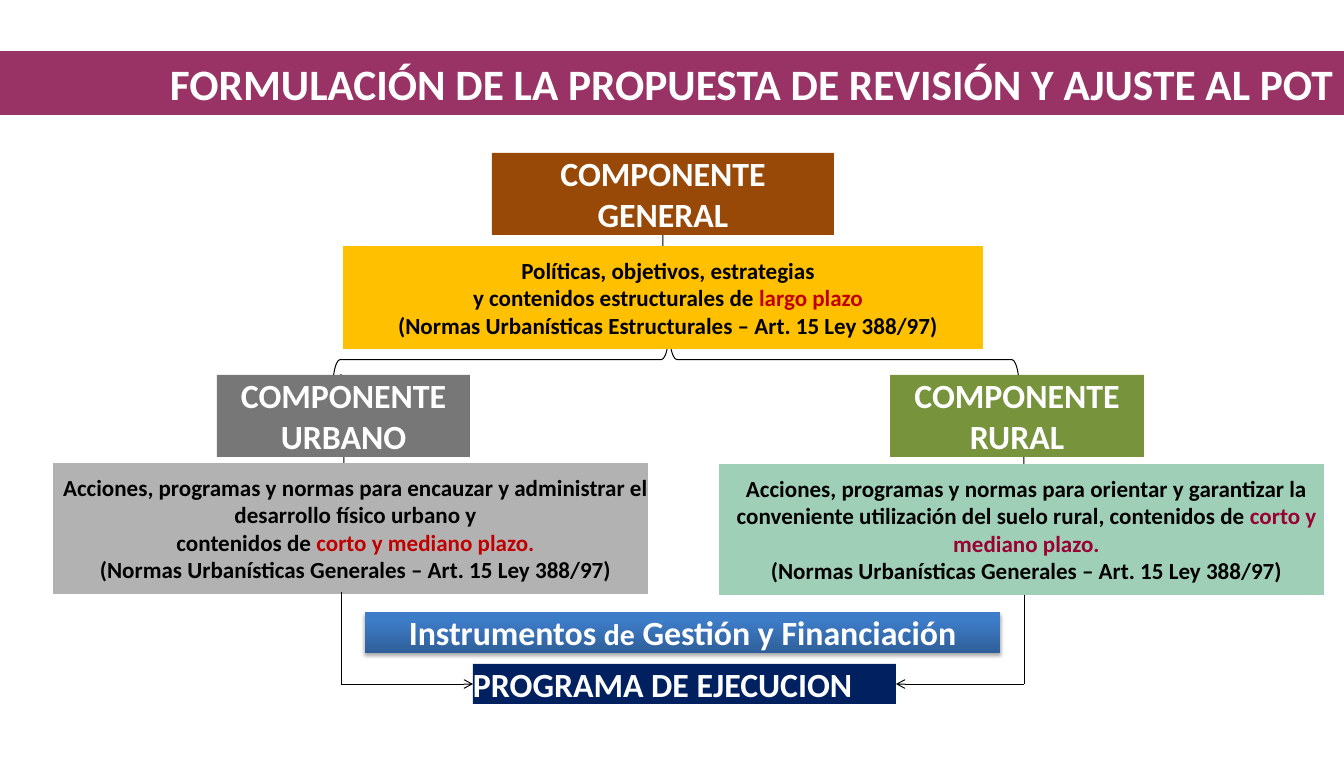
"""Builds the slide on the components of the POT review and adjustment proposal."""
from lxml.etree import SubElement
from pptx import Presentation
from pptx.dml.color import RGBColor as RGB
from pptx.enum.shapes import MSO_CONNECTOR as LINE, MSO_SHAPE as SHAPE
from pptx.enum.text import MSO_ANCHOR as ANCHOR, PP_ALIGN as ALIGN
from pptx.oxml.ns import qn
from pptx.util import Pt

PX = 914400 / 97.5
THEME = {
    "font": "Calibri",
    "title_size": 32, "heading_size": 25, "small_heading_size": 22, "body_size": 17,
    "white": "FFFFFF", "black": "000000", "red": "C00000", "crimson": "990033",
    "plum": "993366", "brown": "984807", "grey": "777777", "olive": "77933C",
    "amber": "FFC000", "silver": "B2B2B2", "green": "339966", "navy": "002060",
    "blue_dark": "2F5F99", "blue_light": "3D7CC7",
}


def fill_box(box, place, fill, paragraphs, size, color, align=ALIGN.CENTER):
    box.left, box.top, box.width, box.height = [round(n * PX) for n in place]
    box.shadow.inherit = False
    box.fill.solid()
    box.fill.fore_color.rgb = RGB.from_string(THEME[fill])
    box.line.fill.background()
    frame = box.text_frame
    frame.word_wrap = True
    for index, spans in enumerate(paragraphs):
        para = frame.add_paragraph() if index else frame.paragraphs[0]
        para.alignment = align
        para.font.name = THEME["font"]
        para.font.size = Pt(THEME[size])
        para.font.bold = True
        para.font.color.rgb = RGB.from_string(THEME[color])
        for text, accent in spans:
            span = para.add_run()
            span.text = text
            if accent:
                span.font.color.rgb = RGB.from_string(THEME[accent])
    return box


def add_line(start, end, width=0.75):
    ends = [round(n * PX) for n in (*start, *end)]
    line = slide.shapes.add_connector(LINE.STRAIGHT, *ends)
    line.line.width = Pt(width)
    line.line.color.rgb = RGB.from_string(THEME["black"])
    SubElement(line._element.spPr, qn("a:effectLst"))
    return line


deck = Presentation()
deck.slide_width, deck.slide_height = round(1344 * PX), round(768 * PX)
slide = deck.slides.add_slide(deck.slide_layouts[5])

title = fill_box(slide.shapes.title, (0, 51, 1344, 64), "plum",
                 [[("FORMULACIÓN DE LA PROPUESTA DE REVISIÓN Y AJUSTE AL POT", None)]],
                 "title_size", "white", ALIGN.RIGHT)
title.text_frame.vertical_anchor = ANCHOR.MIDDLE

brace = slide.shapes.add_shape(SHAPE.RIGHT_BRACE, *[round(n * PX) for n in (644, 16, 64, 687)])
brace.rotation = 270
brace.adjustments[0], brace.adjustments[1] = 0.12, 0.49
brace.shadow.inherit = False
brace.fill.background()
brace.line.width = Pt(0.75)
brace.line.color.rgb = RGB.from_string(THEME["black"])

add_line((1021, 375), (1024, 464))
add_line((341, 374), (344, 463))

headings = [
    ("general", (492, 153, 342, 82), "brown", ["COMPONENTE GENERAL"], ALIGN.CENTER),
    ("urbano", (217, 375, 253, 82), "grey", ["COMPONENTE URBANO"], ALIGN.CENTER),
    ("rural", (890, 375, 254, 82), "olive", ["COMPONENTE", "RURAL"], ALIGN.CENTER),
    ("programa", (473, 664, 423, 40), "navy", ["PROGRAMA DE EJECUCION"], ALIGN.LEFT),
    ("instrumentos", (365, 612, 635, 41), "blue_dark", [], ALIGN.CENTER),
]
details = [
    ("políticas", (343, 246, 640, 103), "amber", [
        [("Políticas, objetivos, estrategias", None)],
        [("y contenidos estructurales de ", None), ("largo plazo", "red")],
        [("(Normas Urbanísticas Estructurales – Art. 15 Ley 388/97)", None)]]),
    ("acciones urbanas", (53, 463, 595, 131), "silver", [
        [("Acciones, programas y normas para encauzar y administrar el "
          "desarrollo físico urbano y", None)],
        [("contenidos de ", None), ("corto y mediano plazo.", "red")],
        [("(Normas Urbanísticas Generales – Art. 15 Ley 388/97)", None)]]),
    ("acciones rurales", (719, 464, 605, 131), "green", [
        [("Acciones, programas y normas para orientar y garantizar la conveniente "
          "utilización del suelo rural, contenidos de ", None),
         ("corto y mediano plazo.", "crimson")],
        [("(Normas Urbanísticas Generales – Art. 15 Ley 388/97)", None)]]),
]
rows = [(name, place, fill, [[(text, None)] for text in texts], "heading_size", "white", align, 0)
        for name, place, fill, texts, align in headings]
rows += [(name, place, fill, paragraphs, "body_size", "black", ALIGN.CENTER, 10)
         for name, place, fill, paragraphs in details]

boxes = {}
for name, place, fill, paragraphs, size, color, align, inset in rows:
    box = slide.shapes.add_shape(SHAPE.RECTANGLE, 0, 0, 0, 0)
    boxes[name] = fill_box(box, place, fill, paragraphs, size, color, align)
    frame = box.text_frame
    frame.vertical_anchor = ANCHOR.TOP
    frame.margin_left = frame.margin_top = round(inset * PX)
    frame.margin_right = frame.margin_bottom = 0

green_fill = boxes["acciones rurales"]._element.spPr.find(qn("a:solidFill"))
SubElement(green_fill[0], qn("a:alpha"), val="47000")

banner = boxes["instrumentos"]
banner.fill.gradient()
banner.fill.gradient_angle = 90
for stop, position, color in zip(banner.fill.gradient_stops, (0, 0.8), ("blue_dark", "blue_light")):
    stop.position = position
    stop.color.rgb = RGB.from_string(THEME[color])
effects = banner._element.spPr.find(qn("a:effectLst"))
shadow = SubElement(effects, qn("a:outerShdw"), blurRad="39370", dist="22860", dir="5400000",
                    rotWithShape="0")
shade = SubElement(shadow, qn("a:srgbClr"), val=THEME["black"])
SubElement(shade, qn("a:alpha"), val="35000")
para = banner.text_frame.paragraphs[0]
para.alignment = ALIGN.CENTER
para.font.name = THEME["font"]
para.font.bold = True
para.font.color.rgb = RGB.from_string(THEME["white"])
for text, size in (("Instrumentos ", "heading_size"), ("de", "small_heading_size"),
                   (" Gestión y Financiación", "heading_size")):
    span = para.add_run()
    span.text = text
    span.font.size = Pt(THEME[size])

link = add_line((663, 235), (663, 246))
link.begin_connect(boxes["general"], 2)
link.end_connect(boxes["políticas"], 0)

for x, bottom, edge, side in ((341, 592, 473, 1), (1024, 595, 896, 3)):
    add_line((x, 684), (x, bottom), 0.5)
    arrow = add_line((x, 684), (edge, 684))
    arrow.end_connect(boxes["programa"], side)
    SubElement(arrow.line._get_or_add_ln(), qn("a:tailEnd"), type="arrow")

deck.save("out.pptx")
